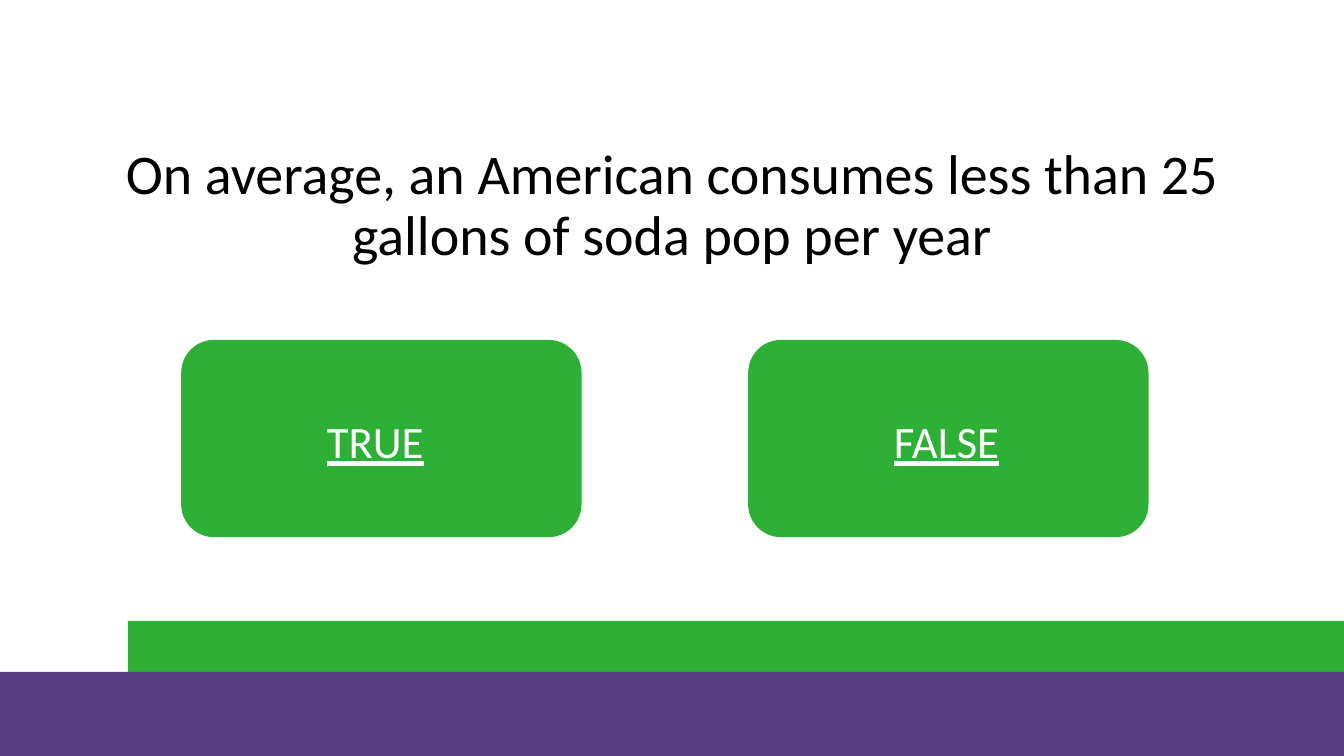
from dataclasses import dataclass

from pptx import Presentation
from pptx.dml.color import RGBColor
from pptx.enum import shapes, text
from pptx.oxml.ns import qn
from pptx.util import Pt

STATEMENT = "On average, an American consumes less than 25 gallons of soda pop per year"
ANSWERS = ["TRUE", "FALSE"]


@dataclass(frozen=True)
class Theme:
    font: str = "Calibri"
    ink: str = "000000"
    white: str = "FFFFFF"
    green: str = "2DB035"
    purple: str = "573D82"
    statement_size: int = 40
    answer_size: int = 32


THEME = Theme()
SLIDE_W, SLIDE_H = 960, 540
BODY_BOX = (66, 100.8, 828, 443.5 - 100.8)
BANDS = [
    ((91.4, 443.5, SLIDE_W - 91.4, SLIDE_H - 443.5), THEME.green),
    ((0, 480, SLIDE_W, 60), THEME.purple),
]
BUTTON_LEFT, BUTTON_TOP, BUTTON_W, BUTTON_H = 129.4, 242.8, 286, 140.9
BUTTON_STEP = 405
LABEL_INDENT, LABEL_DROP, LABEL_H = 97, 49.5, 46


def write(tf, content, size, color, underline=None, align=None):
    tf.word_wrap = True
    p = tf.paragraphs[0]
    p.alignment = align
    r = p.add_run()
    r.text = content
    r.font.name = THEME.font
    r.font.size = Pt(size)
    r.font.underline = underline
    r.font.color.rgb = RGBColor.from_string(color)
    return p


def add_block(container, kind, box, color):
    sp = container.add_shape(kind, *map(Pt, box))
    sp.shadow.inherit = False
    sp.fill.solid()
    sp.fill.fore_color.rgb = RGBColor.from_string(color)
    sp.line.fill.background()


def add_statement(s):
    sp = s.placeholders[1]
    sp.left, sp.top, sp.width, sp.height = map(Pt, BODY_BOX)
    tf = sp.text_frame
    p = write(tf, STATEMENT, THEME.statement_size, THEME.ink,
              align=text.PP_ALIGN.CENTER)
    tf.auto_size = text.MSO_AUTO_SIZE.NONE
    p.line_spacing = 0.9
    p.space_before = Pt(10)
    pPr = p._p.get_or_add_pPr()
    pPr.set("marL", "0")
    pPr.set("indent", "0")
    pPr.append(pPr.makeelement(qn("a:buNone"), {}))


def add_answer(s, index, answer):
    left = BUTTON_LEFT + index * BUTTON_STEP
    add_block(s.shapes, shapes.MSO_SHAPE.ROUNDED_RECTANGLE,
              (left, BUTTON_TOP, BUTTON_W, BUTTON_H), THEME.green)
    label_box = (left + LABEL_INDENT, BUTTON_TOP + LABEL_DROP,
                 BUTTON_W - LABEL_INDENT, LABEL_H)
    label = s.shapes.add_textbox(*map(Pt, label_box))
    write(label.text_frame, answer, THEME.answer_size, THEME.white, underline=True)
    label.text_frame.auto_size = text.MSO_AUTO_SIZE.SHAPE_TO_FIT_TEXT


def main():
    prs = Presentation()
    prs.slide_width, prs.slide_height = Pt(SLIDE_W), Pt(SLIDE_H)
    s = prs.slides.add_slide(prs.slide_layouts[1])
    title = s.shapes.title._element
    title.getparent().remove(title)
    add_statement(s)
    footer = s.shapes.add_group_shape()
    for box, color in BANDS:
        add_block(footer.shapes, shapes.MSO_SHAPE.RECTANGLE, box, color)
    for index, answer in enumerate(ANSWERS):
        add_answer(s, index, answer)
    prs.save("out.pptx")


if __name__ == "__main__":
    main()
